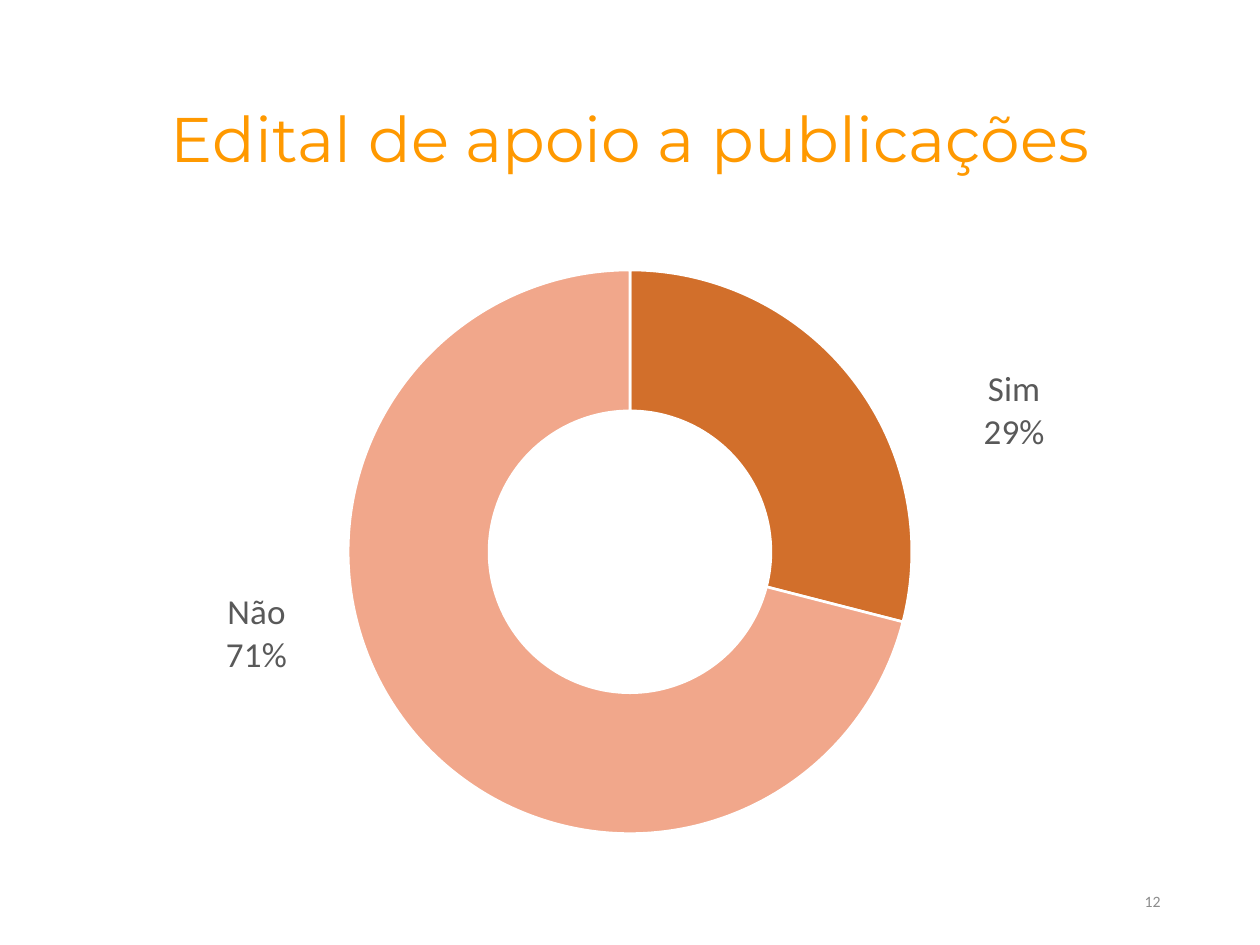
from copy import deepcopy

from lxml import etree
from pptx import Presentation
from pptx.chart.data import CategoryChartData
from pptx.dml.color import RGBColor
from pptx.enum.chart import XL_CHART_TYPE as ChartType
from pptx.enum.text import MSO_ANCHOR as Anchor, PP_ALIGN as Align
from pptx.oxml import parse_xml
from pptx.oxml.ns import nsdecls, qn
from pptx.util import Inches, Pt

ORANGE = RGBColor(0xFF, 0x99, 0x00)
DARK = RGBColor(0xD2, 0x6F, 0x2B)
LIGHT = RGBColor(0xF1, 0xA7, 0x8B)
WHITE = RGBColor(0xFF, 0xFF, 0xFF)
BLACK = RGBColor(0, 0, 0)
LABEL_GREY = RGBColor(0x59, 0x59, 0x59)
NUMBER_GREY = RGBColor(0x8C, 0x8C, 0x8C)

LEFT, WIDTH = Inches(0.69), Inches(8.62)
ANSWERS = [
    ("Sim", 29, DARK, (0.2, -0.02)),
    ("Não", 71, LIGHT, (-0.19, -0.08)),
]


def set_font(font, name, size, color):
    font.name, font.size = name, Pt(size)
    font.color.rgb = color


def write_text(sp, box, text, align, font):
    sp.left, sp.top, sp.width, sp.height = box
    tf = sp.text_frame
    tf.word_wrap = True
    tf.vertical_anchor = Anchor.MIDDLE
    p = tf.paragraphs[0]
    p.text, p.alignment = text, align
    set_font(p.font, *font)
    return p


def add_title(slide, box):
    p = write_text(slide.shapes.title, box, "Edital de apoio a publicações",
                   Align.CENTER, ("Montserrat", 36, ORANGE))
    p.line_spacing = 0.9


def add_page_number(slide, box):
    write_text(slide.shapes.add_textbox(*box), box, "12",
               Align.RIGHT, ("Calibri", 9, NUMBER_GREY))


def layout_xml(**values):
    items = "".join(f'<c:{k} val="{v}"/>' for k, v in values.items())
    return parse_xml(f'<c:layout {nsdecls("c")}><c:manualLayout>{items}'
                     "</c:manualLayout></c:layout>")


def add_labels(series):
    labels = series.data_labels
    labels.show_value = False
    labels.show_category_name = labels.show_percentage = True
    labels.number_format, labels.number_format_is_linked = "0%", False
    set_font(labels.font, "Calibri", 20, LABEL_GREY)

    group = series._element.find(qn("c:dLbls"))
    separator = etree.Element(qn("c:separator"))
    separator.text = "\n"
    group.find(qn("c:showBubbleSize")).addnext(separator)
    leader = group.find(qn("c:showLeaderLines"))
    if leader is not None:
        leader.set("val", "0")
    shared = [child for child in group if child is not leader]
    for i, (_, _, _, (x, y)) in enumerate(ANSWERS):
        label = parse_xml(f'<c:dLbl {nsdecls("c")}><c:idx val="{i}"/></c:dLbl>')
        label.append(layout_xml(x=x, y=y))
        label.extend(deepcopy(shared))
        group.insert(i, label)


def add_doughnut(slide, box):
    data = CategoryChartData()
    data.categories = [name for name, *_ in ANSWERS]
    data.add_series("Series 1", [value for _, value, *_ in ANSWERS])
    chart = slide.shapes.add_chart(ChartType.DOUGHNUT, *box, data).chart
    chart.has_legend = chart.has_title = False
    set_font(chart.font, "Calibri", 10, BLACK)

    plot = chart.plots[0]
    plot.vary_by_categories = True
    plot_area = plot._element.getparent()
    old = plot_area.find(qn("c:layout"))
    if old is not None:
        plot_area.remove(old)
    plot_area.insert(0, layout_xml(layoutTarget="inner", xMode="edge", yMode="edge",
                                   x=0.24, y=0.03, w=0.52, h=0.94))
    plot._element.find(qn("c:holeSize")).set("val", "50")

    series = plot.series[0]
    for i, (_, _, color, _) in enumerate(ANSWERS):
        fmt = series.points[i].format
        fmt.fill.solid()
        fmt.fill.fore_color.rgb = color
        fmt.line.color.rgb = WHITE
        fmt.line.width = Pt(1.5)
    add_labels(series)


def main():
    prs = Presentation()
    prs.slide_width, prs.slide_height = Inches(10), Inches(7.5)
    slide = prs.slides.add_slide(prs.slide_layouts[5])
    add_title(slide, (LEFT, Inches(0.4), WIDTH, Inches(1.45)))
    add_page_number(slide, (Inches(7.06), Inches(6.95), Inches(2.25), Inches(0.4)))
    add_doughnut(slide, (LEFT, Inches(2), WIDTH, Inches(4.76)))
    prs.save("out.pptx")


if __name__ == "__main__":
    main()
